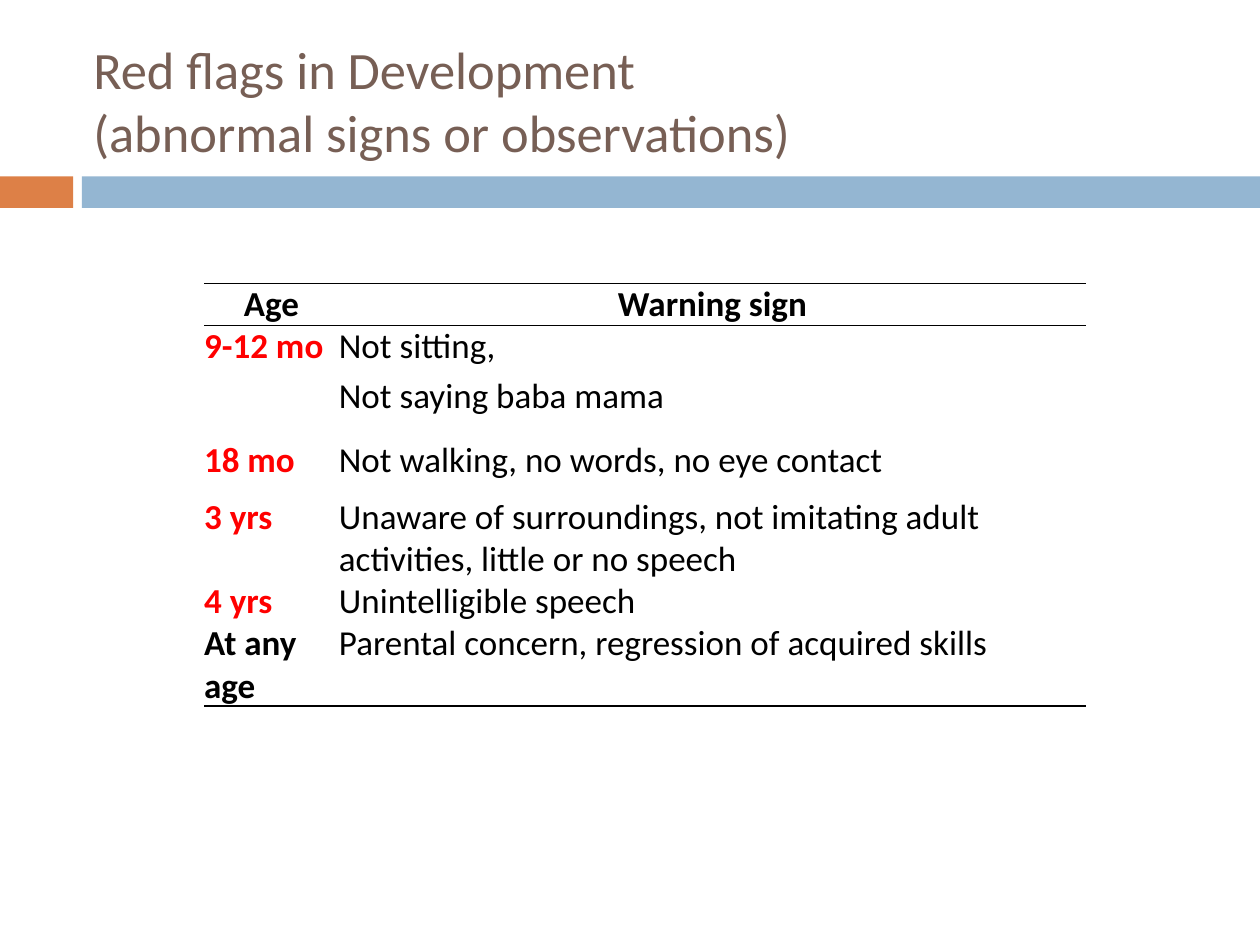
from dataclasses import dataclass

from lxml import etree
from pptx import Presentation
from pptx.dml.color import RGBColor
from pptx.enum.shapes import MSO_SHAPE
from pptx.enum.text import MSO_ANCHOR, PP_ALIGN
from pptx.oxml.ns import qn
from pptx.slide import Slide
from pptx.table import _Cell
from pptx.text.text import _Paragraph
from pptx.util import Inches, Pt

RECTANGLE = MSO_SHAPE.RECTANGLE
MIDDLE = MSO_ANCHOR.MIDDLE
LEFT = PP_ALIGN.LEFT
CENTER = PP_ALIGN.CENTER

FONT = "Calibri"
COLORS = {
    "accent": "DD8047",
    "band": "94B6D2",
    "title": "775F55",
    "text": "000000",
    "flag": "FF0000",
}
TITLE_LINES = ["Red flags in Development ", "(abnormal signs or observations)"]
COLUMN_WIDTHS = [1.07, 5.93]


@dataclass
class Bar:
    left: float
    width: float
    color: str


@dataclass
class WarningRow:
    age: str
    signs: list[str]
    height: float
    age_color: str = "flag"
    is_header: bool = False
    rule_above: bool = False
    rule_below: bool = False


BARS = [Bar(0, 0.58, "accent"), Bar(0.65, 9.35, "band")]
ROWS = [
    WarningRow("Age", ["Warning sign"], 0.3, "text", True, True, True),
    WarningRow("9-12 mo", ["Not sitting,", "Not saying baba mama"], 0.9, rule_above=True),
    WarningRow("18 mo", ["Not walking, no words, no eye contact"], 0.45),
    WarningRow(
        "3 yrs",
        ["Unaware of surroundings, not imitating adult activities, little or no speech"],
        0.6,
    ),
    WarningRow("4 yrs", ["Unintelligible speech"], 0.3),
    WarningRow(
        "At any age",
        ["Parental concern, regression of acquired skills"],
        0.34,
        "text",
        rule_below=True,
    ),
]


def add_run(paragraph: _Paragraph, text: str, size: int, color: str, bold: bool = False) -> None:
    run = paragraph.add_run()
    run.text = text
    run.font.name = FONT
    run.font.size = Pt(size)
    run.font.bold = bold
    run.font.color.rgb = RGBColor.from_string(COLORS[color])


def add_bar(slide: Slide, bar: Bar) -> None:
    shape = slide.shapes.add_shape(
        RECTANGLE, Inches(bar.left), Inches(1.4), Inches(bar.width), Inches(0.25)
    )
    shape.shadow.inherit = False
    shape.fill.solid()
    shape.fill.fore_color.rgb = RGBColor.from_string(COLORS[bar.color])
    shape.line.fill.background()


def add_title(slide: Slide) -> None:
    box = slide.shapes.add_textbox(Inches(0.67), Inches(0.25), Inches(8.92), Inches(1.08))
    frame = box.text_frame
    frame.word_wrap = True
    frame.vertical_anchor = MIDDLE
    frame.margin_left = frame.margin_right = Inches(0.07)
    frame.margin_top = frame.margin_bottom = Inches(0.04)
    paragraph = frame.paragraphs[0]
    for index, line in enumerate(TITLE_LINES):
        if index:
            paragraph.add_line_break()
        add_run(paragraph, line, 30, "title")


def set_borders(cell: _Cell, above: bool, below: bool) -> None:
    properties = cell._tc.get_or_add_tcPr()
    for edge, visible in (("L", False), ("R", False), ("T", above), ("B", below)):
        line = etree.SubElement(properties, qn(f"a:ln{edge}"), w=str(Pt(1)))
        if visible:
            fill = etree.SubElement(line, qn("a:solidFill"))
            etree.SubElement(fill, qn("a:srgbClr"), val=COLORS["text"])
        else:
            etree.SubElement(line, qn("a:noFill"))


def fill_cell(cell: _Cell, lines: list[str], row: WarningRow, color: str, bold: bool) -> None:
    cell.margin_left = cell.margin_right = cell.margin_top = cell.margin_bottom = Inches(0)
    set_borders(cell, row.rule_above, row.rule_below)
    cell.fill.background()
    frame = cell.text_frame
    for index, line in enumerate(lines):
        paragraph = frame.add_paragraph() if index else frame.paragraphs[0]
        paragraph.alignment = CENTER if row.is_header else LEFT
        paragraph.space_before = Pt(4)
        add_run(paragraph, line, 20, color, bold)


def add_warning_table(slide: Slide) -> None:
    table = slide.shapes.add_table(
        len(ROWS),
        len(COLUMN_WIDTHS),
        Inches(1.62),
        Inches(2.25),
        Inches(sum(COLUMN_WIDTHS)),
        Inches(sum(row.height for row in ROWS)),
    ).table
    table.first_row = False
    table.horz_banding = False
    for column, width in zip(table.columns, COLUMN_WIDTHS):
        column.width = Inches(width)
    for index, row in enumerate(ROWS):
        table.rows[index].height = Inches(row.height)
        fill_cell(table.cell(index, 0), [row.age], row, row.age_color, True)
        fill_cell(table.cell(index, 1), row.signs, row, "text", row.is_header)


def main() -> None:
    presentation = Presentation()
    presentation.slide_width = Inches(10)
    presentation.slide_height = Inches(7.5)
    slide = presentation.slides.add_slide(presentation.slide_layouts[6])
    for bar in BARS:
        add_bar(slide, bar)
    add_title(slide)
    add_warning_table(slide)
    presentation.save("out.pptx")


if __name__ == "__main__":
    main()
